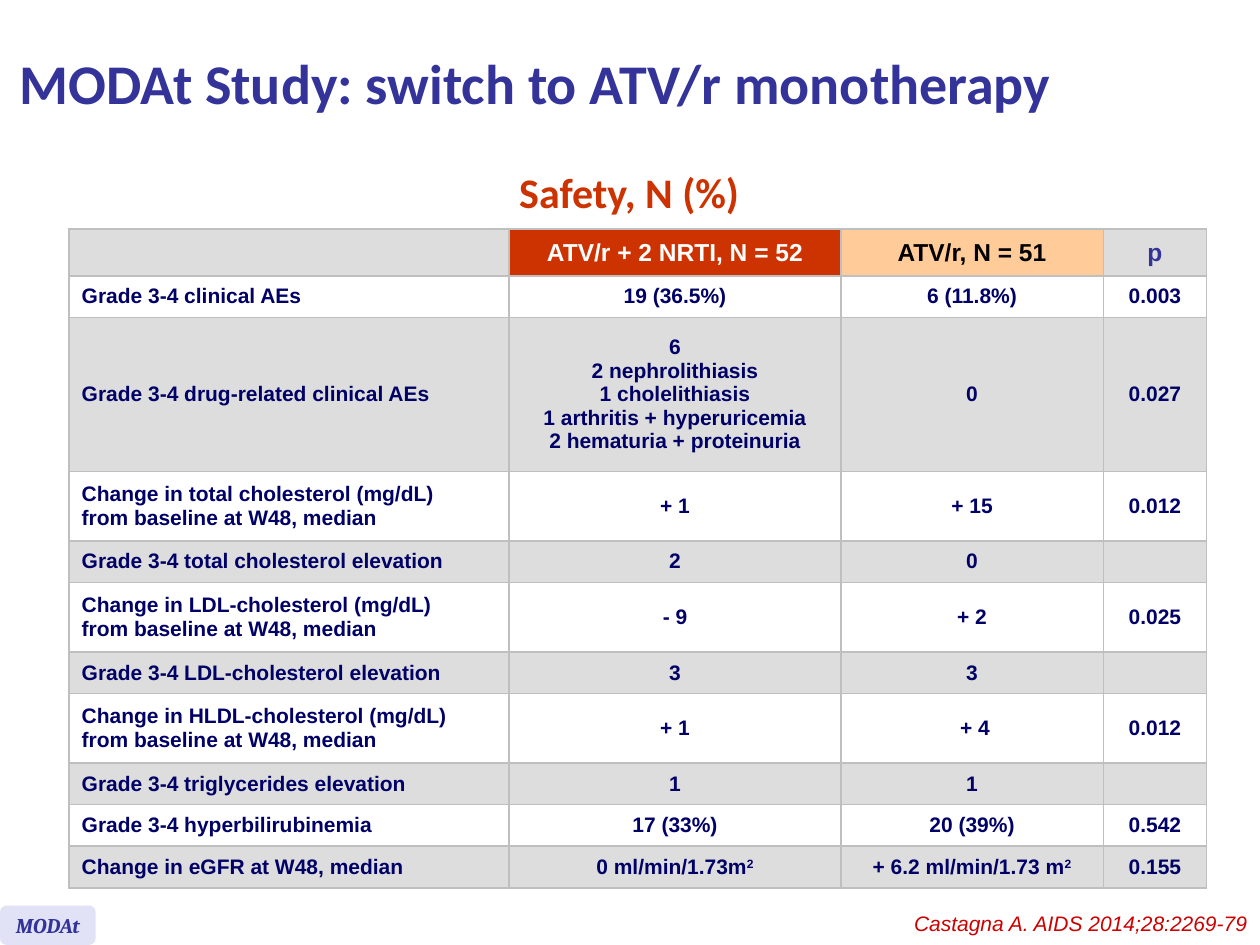
from lxml.etree import SubElement
from pptx import Presentation
from pptx.dml.color import RGBColor
from pptx.enum.shapes import MSO_SHAPE
from pptx.enum.text import MSO_ANCHOR, PP_ALIGN
from pptx.oxml.ns import qn
from pptx.util import Pt

WHITE = RGBColor(0xFF, 0xFF, 0xFF)
BLACK = RGBColor(0, 0, 0)
GREY = RGBColor(0xDD, 0xDD, 0xDD)
RULE = RGBColor(0xBF, 0xBF, 0xBF)
NAVY = RGBColor(0, 0, 0x66)
BLUE = RGBColor(0x33, 0x33, 0x99)
PALE = RGBColor(0xE2, 0xE2, 0xF6)
RUST = RGBColor(0xCC, 0x33, 0)
PEACH = RGBColor(0xFF, 0xCC, 0x99)
RED = RGBColor(0xCC, 0, 0)

COLS = [251.5, 189.5, 150, 59]
HEAD, LINE, PAIR, LIST = 26.6, 23.8, 39.7, 88
HEADS = [("", GREY, BLUE), ("ATV/r + 2 NRTI, N = 52", RUST, WHITE),
         ("ATV/r, N = 51", PEACH, BLACK), ("p", GREY, BLUE)]
EVENTS = "\n".join(["6", "2 nephrolithiasis", "1 cholelithiasis",
                    "1 arthritis + hyperuricemia", "2 hematuria + proteinuria"])
# Row height, then cell texts; "^" raises the rest of a cell, "\v" breaks a line
ROWS = [
    (LINE, "Grade 3-4 clinical AEs", "19 (36.5%)", "6 (11.8%)", "0.003"),
    (LIST, "Grade 3-4 drug-related clinical AEs", EVENTS, "0", "0.027"),
    (PAIR, "Change in total cholesterol (mg/dL) \vfrom baseline at W48, median",
     "+ 1", "+ 15", "0.012"),
    (LINE, "Grade 3-4 total cholesterol elevation", "2", "0", ""),
    (PAIR, "Change in LDL-cholesterol (mg/dL) \vfrom baseline at W48, median",
     "- 9", "+ 2", "0.025"),
    (LINE, "Grade 3-4 LDL-cholesterol elevation", "3", "3", ""),
    (PAIR, "Change in HLDL-cholesterol (mg/dL) from baseline at W48, median",
     "+ 1", " + 4", "0.012"),
    (LINE, "Grade 3-4 triglycerides elevation", "1", "1", ""),
    (LINE, "Grade 3-4 hyperbilirubinemia", "17 (33%)", "20 (39%)", "0.542"),
    (LINE, "Change in eGFR at W48, median", "0 ml/min/1.73m^2",
     "+ 6.2 ml/min/1.73 m^2", "0.155"),
]


def style(frame, face, size, color, align, bold=True, italic=False):
    for para in frame.paragraphs:
        para.alignment = align
        for run in para.runs:
            font = run.font
            font.name, font.size, font.color.rgb = face, Pt(size), color
            font.bold, font.italic = bold, italic


def border(cell):
    props = cell._tc.get_or_add_tcPr()
    for at, side in enumerate(("a:lnL", "a:lnR", "a:lnT", "a:lnB")):
        line = props.makeelement(qn(side), {"w": str(Pt(1))})
        fill = SubElement(line, qn("a:solidFill"))
        SubElement(fill, qn("a:srgbClr"), val=str(RULE))
        props.insert(at, line)


def fill_cell(cell, text, size, color, back, align):
    base, _, power = text.partition("^")
    frame = cell.text_frame
    frame.text = base
    para = frame.paragraphs[0]
    if power:
        run = para.add_run()
        run.text = power
        run._r.get_or_add_rPr().set("baseline", "30000")
    if not text:  # keeps an empty cell from stretching its row
        SubElement(para._p, qn("a:endParaRPr"), sz=str(size * 100))
    style(frame, "Arial", size, color, align)
    cell.vertical_anchor = MSO_ANCHOR.MIDDLE
    cell.fill.solid()
    cell.fill.fore_color.rgb = back
    border(cell)


def add_grid(slide, x, y, w, h):
    grid = slide.shapes.add_table(len(ROWS) + 1, len(COLS),
                                  Pt(x), Pt(y), Pt(w), Pt(h)).table
    for col, width in zip(grid.columns, COLS):
        col.width = Pt(width)
    for row, height in zip(grid.rows, [HEAD] + [r[0] for r in ROWS]):
        row.height = Pt(height)
    for c, (text, back, color) in enumerate(HEADS):
        fill_cell(grid.cell(0, c), text, 14, color, back, PP_ALIGN.CENTER)
    for r, (_, *texts) in enumerate(ROWS, 1):
        back = WHITE if r % 2 else GREY
        for c, text in enumerate(texts):
            align = PP_ALIGN.CENTER if c else PP_ALIGN.LEFT
            fill_cell(grid.cell(r, c), text, 12, NAVY, back, align)


def add_text(slide, x, y, w, h, text, *look, anchor=MSO_ANCHOR.MIDDLE, **extra):
    frame = slide.shapes.add_textbox(Pt(x), Pt(y), Pt(w), Pt(h)).text_frame
    frame.word_wrap = True
    frame.vertical_anchor = anchor
    frame.text = text
    style(frame, *look, **extra)
    return frame


def add_badge(slide, x, y, w, h):
    badge = slide.shapes.add_shape(MSO_SHAPE.ROUNDED_RECTANGLE,
                                   Pt(x), Pt(y), Pt(w), Pt(h))
    badge.shadow.inherit = False
    badge.fill.solid()
    badge.fill.fore_color.rgb = PALE
    badge.line.fill.background()
    frame = badge.text_frame
    frame.word_wrap = False
    frame.vertical_anchor = MSO_ANCHOR.MIDDLE
    frame.text = "MODAt"
    style(frame, "Cambria", 12, BLUE, PP_ALIGN.CENTER, italic=True)


def main():
    deck = Presentation()
    deck.slide_width, deck.slide_height = Pt(720), Pt(540)
    slide = deck.slides.add_slide(deck.slide_layouts[6])
    add_grid(slide, 39.5, 131, sum(COLS), 376.5)
    label = add_text(slide, 280, 105, 159, 22.5, "Safety, N (%)",
                     "Calibri", 24, RUST, PP_ALIGN.CENTER)
    label.paragraphs[0].line_spacing = Pt(15.2)
    add_text(slide, 4.3, 3.6, 645, 87, "MODAt Study: switch to ATV/r monotherapy",
             "Calibri", 32, BLUE, PP_ALIGN.LEFT)
    add_text(slide, 468, 517, 252, 21.8, "Castagna A. AIDS 2014;28:2269-79",
             "Arial", 12, RED, PP_ALIGN.RIGHT,
             anchor=MSO_ANCHOR.TOP, bold=False, italic=True)
    add_badge(slide, 0, 517.5, 54.7, 22.5)
    deck.save("out.pptx")


if __name__ == "__main__":
    main()
